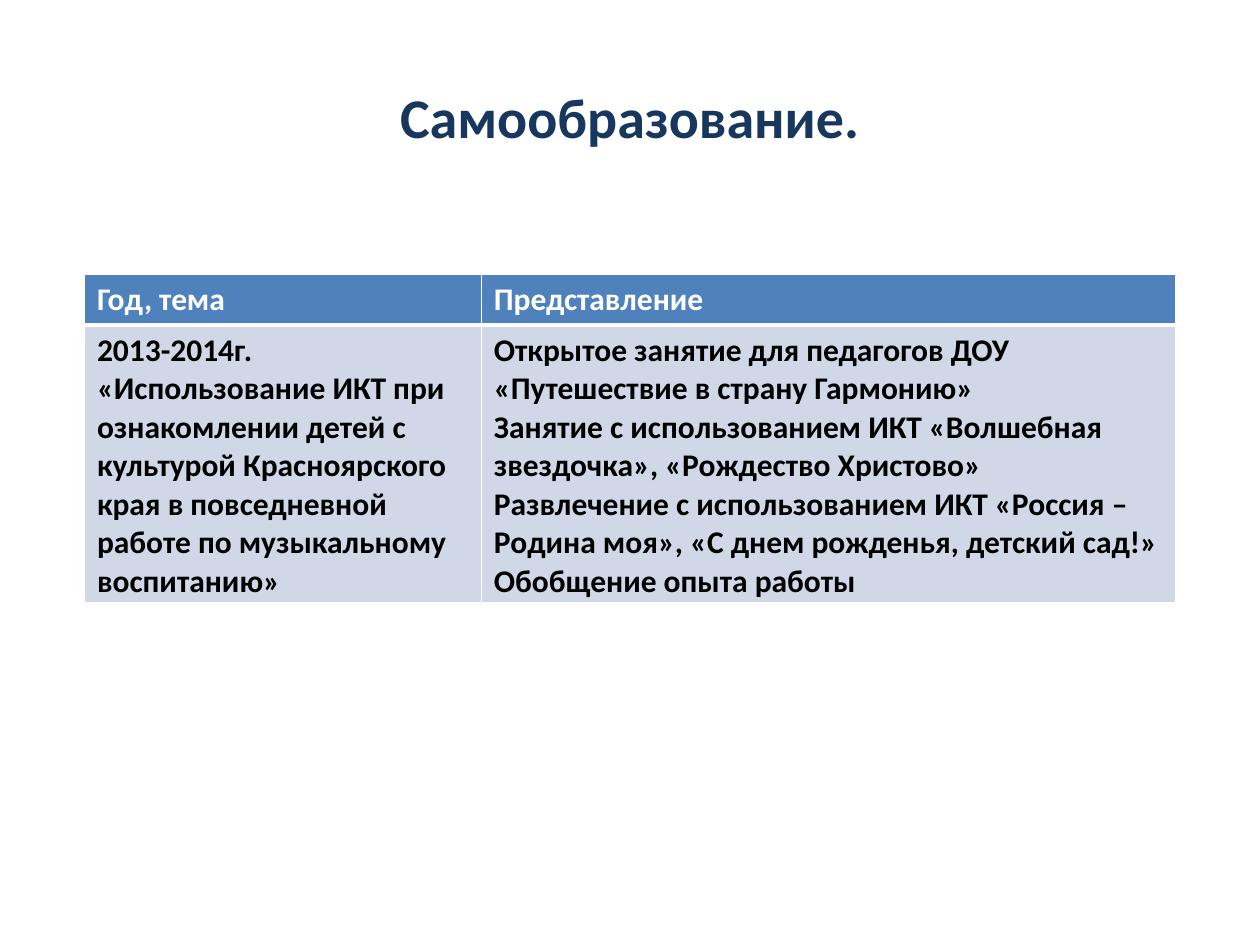
from typing import NamedTuple

from lxml import etree
from pptx import Presentation
from pptx import util as u
from pptx.dml.color import RGBColor
from pptx.enum import text
from pptx.oxml import ns


class RowStyle(NamedTuple):
    height: float
    fill: str
    ink: str
    bottom_border: float


HEADER = RowStyle(0.4, "4F81BD", "FFFFFF", 3)
BODY = RowStyle(2.2, "D0D8E8", "000000", 1)
BORDER = "FFFFFF"
COLUMN_WIDTHS = (3.15, 5.51)

ROWS = [
    (HEADER, [["Год, тема"], ["Представление"]]),
    (BODY, [
        [
            "2013-2014г.",
            "«Использование ИКТ при ознакомлении детей с культурой "
            "Красноярского края в повседневной работе по музыкальному воспитанию»",
        ],
        [
            "Открытое занятие для педагогов ДОУ",
            "«Путешествие в страну Гармонию»",
            "Занятие с использованием ИКТ «Волшебная звездочка», «Рождество Христово»",
            "Развлечение с использованием ИКТ «Россия – Родина моя», "
            "«С днем рожденья, детский сад!»",
            "Обобщение опыта работы",
        ],
    ]),
]


def color(value: str) -> RGBColor:
    return RGBColor.from_string(value)


def write(frame, lines: list[str], size: float, ink: str) -> None:
    frame.text = "\n".join(lines)
    for paragraph in frame.paragraphs:
        for run in paragraph.runs:
            run.font.name = "Calibri"
            run.font.size = u.Pt(size)
            run.font.bold = True
            run.font.color.rgb = color(ink)


def add_borders(cell, style: RowStyle, top: float) -> None:
    properties = cell._tc.get_or_add_tcPr()
    widths = {"lnL": 1, "lnR": 1, "lnT": top, "lnB": style.bottom_border}
    for side, width in widths.items():
        line = etree.SubElement(properties, ns.qn(f"a:{side}"), w=str(u.Pt(width)))
        fill = etree.SubElement(line, ns.qn("a:solidFill"))
        etree.SubElement(fill, ns.qn("a:srgbClr"), val=BORDER)


def add_title(slide, title: str) -> None:
    heading = slide.shapes.add_textbox(
        u.Inches(0.5), u.Inches(0.3), u.Inches(9), u.Inches(1.25)
    )
    frame = heading.text_frame
    frame.word_wrap = True
    frame.vertical_anchor = text.MSO_ANCHOR.MIDDLE
    write(frame, [title], 32, "17375E")
    frame.paragraphs[0].alignment = text.PP_ALIGN.CENTER


def add_topics(slide) -> None:
    topics = slide.shapes.add_table(
        len(ROWS), len(COLUMN_WIDTHS), u.Inches(0.67), u.Inches(2.18),
        u.Inches(sum(COLUMN_WIDTHS)),
        u.Inches(sum(style.height for style, _ in ROWS)),
    ).table
    for column, width in zip(topics.columns, COLUMN_WIDTHS):
        column.width = u.Inches(width)
    top = 1
    for row, (style, entries) in zip(topics.rows, ROWS):
        row.height = u.Inches(style.height)
        for cell, lines in zip(row.cells, entries):
            add_borders(cell, style, top)
            cell.fill.solid()
            cell.fill.fore_color.rgb = color(style.fill)
            write(cell.text_frame, lines, 18, style.ink)
        top = style.bottom_border


def main() -> None:
    deck = Presentation()
    deck.slide_width, deck.slide_height = u.Inches(10), u.Inches(7.5)
    slide = deck.slides.add_slide(deck.slide_layouts[6])
    add_title(slide, "Самообразование.")
    add_topics(slide)
    deck.save("out.pptx")


if __name__ == "__main__":
    main()
